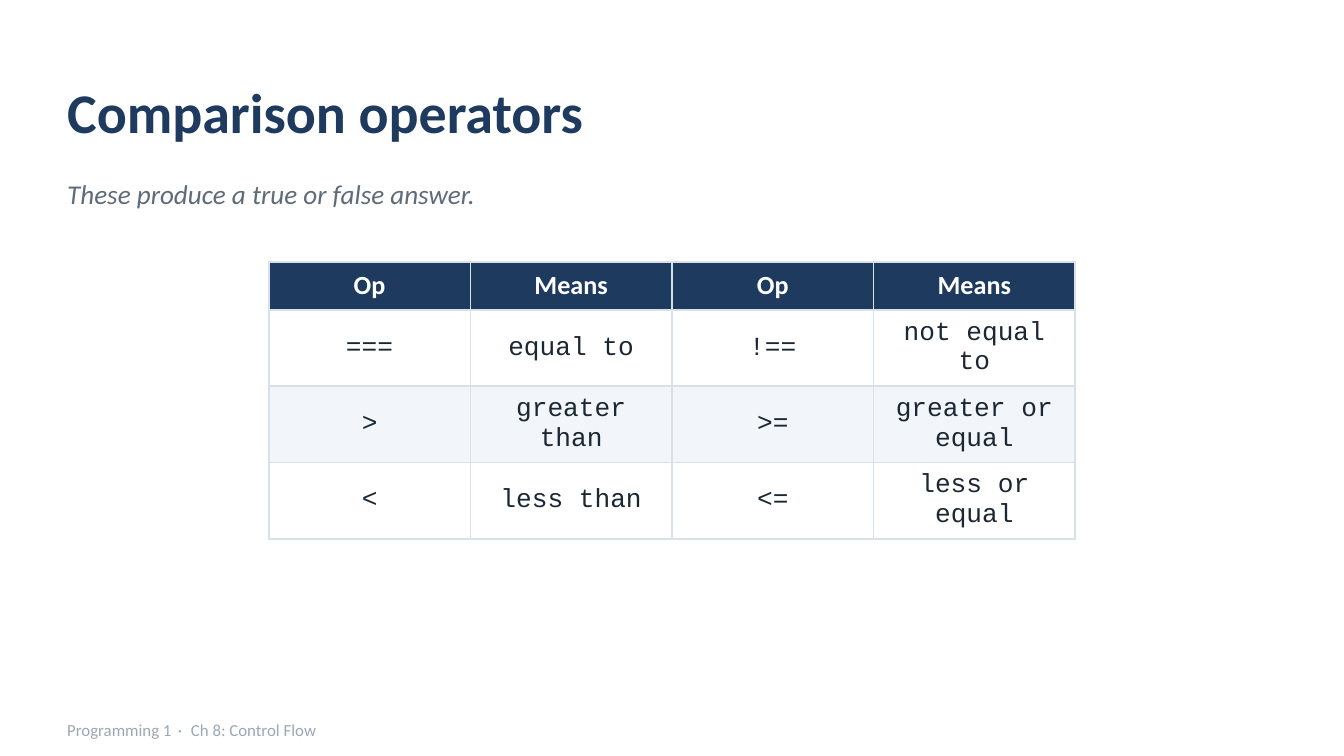
from lxml import etree
from pptx import Presentation
from pptx import util as u
from pptx.dml import color
from pptx.enum import text
from pptx.oxml import ns

COLORS = {
    "navy": "1F3A5F",
    "slate": "5E6B79",
    "footer": "9AA8B6",
    "ink": "1B2733",
    "white": "FFFFFF",
    "stripe": "F2F5F9",
    "border": "D8E0E9",
}


def add_run(paragraph, words, color_name, font_format):
    run = paragraph.add_run()
    run.text = words
    run.font.color.rgb = color.RGBColor.from_string(COLORS[color_name])
    for attribute, value in font_format.items():
        setattr(run.font, attribute, value)
    return run


def add_border(cell):
    """Draw a thin line on all four sides of a table cell."""
    properties = cell._tc.get_or_add_tcPr()
    for position, side in enumerate(("lnL", "lnR", "lnT", "lnB")):
        line = etree.Element(ns.qn(f"a:{side}"), w=str(u.Pt(1)))
        fill = etree.SubElement(line, ns.qn("a:solidFill"))
        etree.SubElement(fill, ns.qn("a:srgbClr"), val=COLORS["border"])
        properties.insert(position, line)


prs = Presentation()
prs.slide_width, prs.slide_height = u.Cm(25.4), u.Cm(14.29)
slide = prs.slides.add_slide(prs.slide_layouts[6])

# Title, subtitle and footer share the left margin: top, width, height, colour, format, pieces
lines = [
    (1.02, 22.86, 2.16, "navy", {"name": "Calibri", "size": u.Pt(30), "bold": True},
     ["Comparison operators"]),
    (3.15, 22.86, 1.02, "slate", {"name": "Calibri", "size": u.Pt(14.5), "italic": True},
     ["These produce a true or false answer."]),
    (13.46, 20.32, 0.66, "footer", {"name": "Calibri", "size": u.Pt(9)},
     ["Programming 1", " · ", "Ch 8: Control Flow"]),
]
frame_format = {
    "margin_left": 0, "margin_right": 0, "margin_top": 0, "margin_bottom": 0,
    "word_wrap": True, "vertical_anchor": text.MSO_ANCHOR.MIDDLE,
}
for top, width, height, color_name, font_format, pieces in lines:
    frame = slide.shapes.add_textbox(u.Cm(1.27), u.Cm(top), u.Cm(width), u.Cm(height)).text_frame
    for attribute, value in frame_format.items():
        setattr(frame, attribute, value)
    for piece in pieces:
        run = add_run(frame.paragraphs[0], piece, color_name, font_format)
        if piece == " · ":
            run.font._element.set("spc", "135")  # wider gap around the dot

# Operator table
operators = [
    ("Op", "Means", "Op", "Means"),
    ("===", "equal to", "!==", "not equal to"),
    (">", "greater than", ">=", "greater or equal"),
    ("<", "less than", "<=", "less or equal"),
]
header_format = {"name": "Calibri", "size": u.Pt(14), "bold": True}
body_format = {"name": "Courier New", "size": u.Pt(14), "bold": False}
row_fills = ["navy", "white", "stripe", "white"]
column_width, row_height = 3.81, 0.91

table = slide.shapes.add_table(
    len(operators), len(operators[0]), u.Cm(5.08), u.Cm(4.95),
    u.Cm(column_width * len(operators[0])), u.Cm(row_height * len(operators)),
).table
for column in table.columns:
    column.width = u.Cm(column_width)
for row, entries, fill_name in zip(table.rows, operators, row_fills):
    row.height = u.Cm(row_height)
    is_header = entries is operators[0]
    for cell, entry in zip(row.cells, entries):
        cell.vertical_anchor = text.MSO_ANCHOR.MIDDLE
        cell.fill.solid()
        cell.fill.fore_color.rgb = color.RGBColor.from_string(COLORS[fill_name])
        add_border(cell)
        paragraph = cell.text_frame.paragraphs[0]
        paragraph.alignment = text.PP_ALIGN.CENTER
        add_run(paragraph, entry, "white" if is_header else "ink",
                header_format if is_header else body_format)

prs.save("out.pptx")
